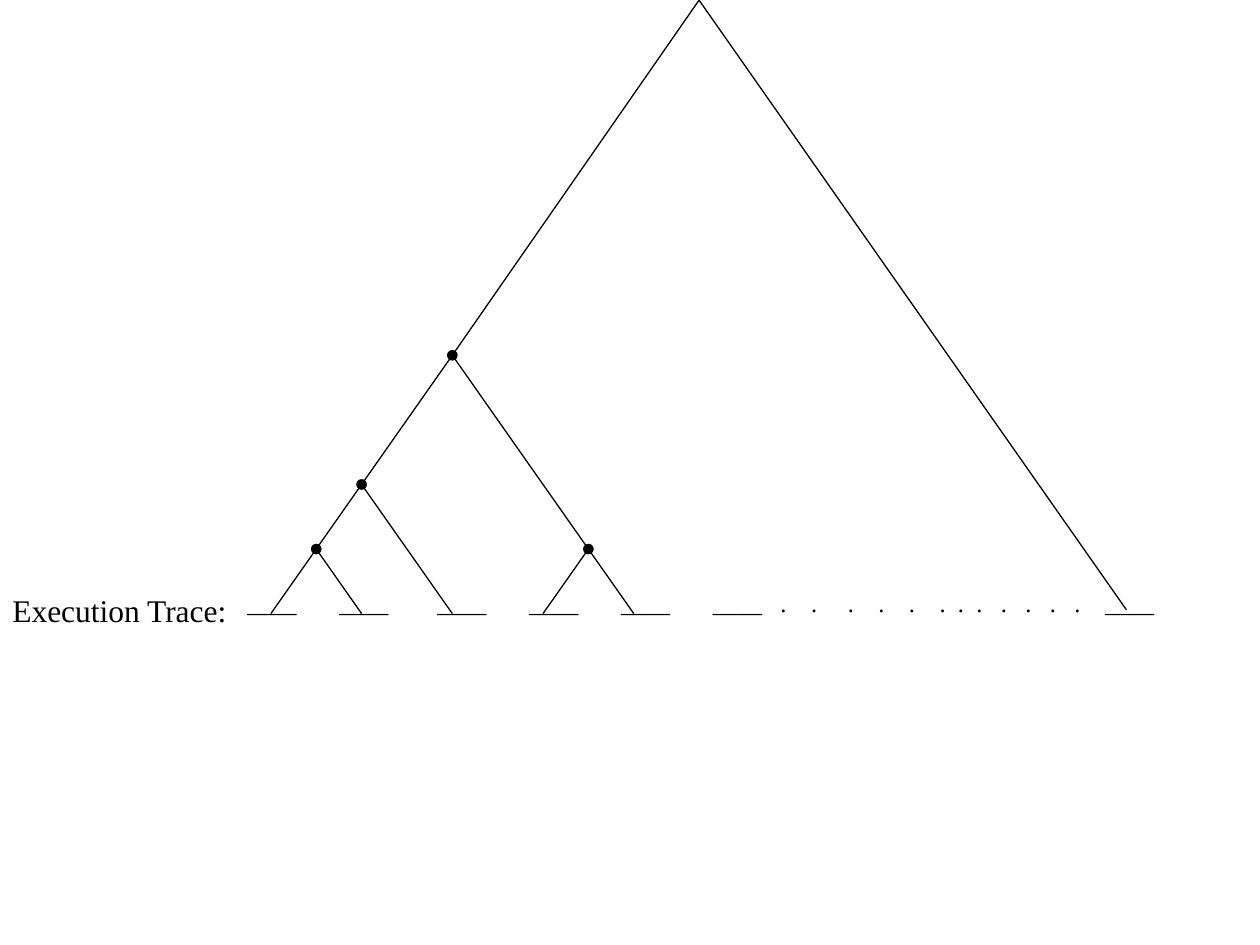
"""Draw a binary tree whose leaves stand on an execution trace."""
import pptx
import pptx.dml.color
import pptx.enum.shapes
import pptx.enum.text
import pptx.oxml
import pptx.oxml.ns
import pptx.util
from lxml import etree

INK = "000000"
FONT = "Times New Roman"
LABEL = "Execution Trace:"
STEP, DOT = "____", "."
TRACE = [STEP] * 6 + [DOT] * 12 + [STEP]
GAPS = [3, 7, 8, 7, 7, 7, 3, 4, 5, 4, 4, 4, 2, 2, 3, 3, 3, 3, 4]
TRACE_SIZE, LABEL_SIZE = 14, 18
CELL = TRACE_SIZE / 4 / 72
CELLS = {STEP: 8, DOT: 1}

LEAF_LEFT, LEAF_TOP = 2.15, 4.87
COLUMN, ROW = 0.36, 0.5125
APEX, RIGHT_FOOT = (9.44, 9.5), (18.86, 0.06)
BRANCHES = [
    ((0, 0), (1, 1)), ((2, 0), (1, 1)),
    ((1, 1), (2, 2)), ((4, 0), (2, 2)),
    ((2, 2), (4, 4)), ((7, 1), (4, 4)),
    ((6, 0), (7, 1)), ((8, 0), (7, 1)),
]
SIDES = [((4, 4), APEX), (RIGHT_FOOT, APEX)]


def colour(hex_string):
    return pptx.dml.color.RGBColor.from_string(hex_string)


def add_text(slide, words, size, left, top, width, height):
    box = slide.shapes.add_textbox(*map(pptx.util.Inches, (left, top, width, height)))
    frame = box.text_frame
    frame.word_wrap = True
    frame.auto_size = pptx.enum.text.MSO_AUTO_SIZE.SHAPE_TO_FIT_TEXT
    paragraph = frame.paragraphs[0]
    paragraph.text = words
    paragraph.font.name = FONT
    paragraph.font.size = pptx.util.Pt(size)
    paragraph.font.color.rgb = colour(INK)
    return paragraph


def add_trace(slide):
    words = "".join("\t" + mark for mark in TRACE)
    paragraph = add_text(slide, words, TRACE_SIZE, 1.72, 4.62, 7.61, 0.34)
    stops = pptx.oxml.parse_xml(f"<a:tabLst {pptx.oxml.ns.nsdecls('a')}/>")
    position = 0
    for mark, gap in zip(TRACE, GAPS):
        position += gap
        etree.SubElement(stops, pptx.oxml.ns.qn("a:tab"),
                         pos=str(pptx.util.Inches(position * CELL)), algn="l")
        position += CELLS[mark]
    paragraph._p.get_or_add_pPr().insert(0, stops)


def place(node):
    column, level = node
    return (pptx.util.Inches(LEAF_LEFT + column * COLUMN),
            pptx.util.Inches(max(0, LEAF_TOP - level * ROW)))


def add_branch(slide, child, parent, dotted):
    branch = slide.shapes.add_connector(
        pptx.enum.shapes.MSO_CONNECTOR.STRAIGHT, *place(child), *place(parent))
    branch.line.color.rgb = colour(INK)
    branch.line.width = pptx.util.Pt(0.75)
    if dotted:
        etree.SubElement(branch.line._get_or_add_ln(), pptx.oxml.ns.qn("a:tailEnd"), type="oval")
    etree.SubElement(branch._element.spPr, pptx.oxml.ns.qn("a:effectLst"))


def main():
    deck = pptx.Presentation()
    deck.slide_width, deck.slide_height = pptx.util.Inches(10), pptx.util.Inches(7.5)
    slide = deck.slides.add_slide(deck.slide_layouts[6])
    add_trace(slide)
    for child, parent in BRANCHES:
        add_branch(slide, child, parent, True)
    for foot, top in SIDES:
        add_branch(slide, foot, top, False)
    add_text(slide, LABEL, LABEL_SIZE, 0, 4.64, 3.84, 0.4)
    deck.save("out.pptx")


if __name__ == "__main__":
    main()
